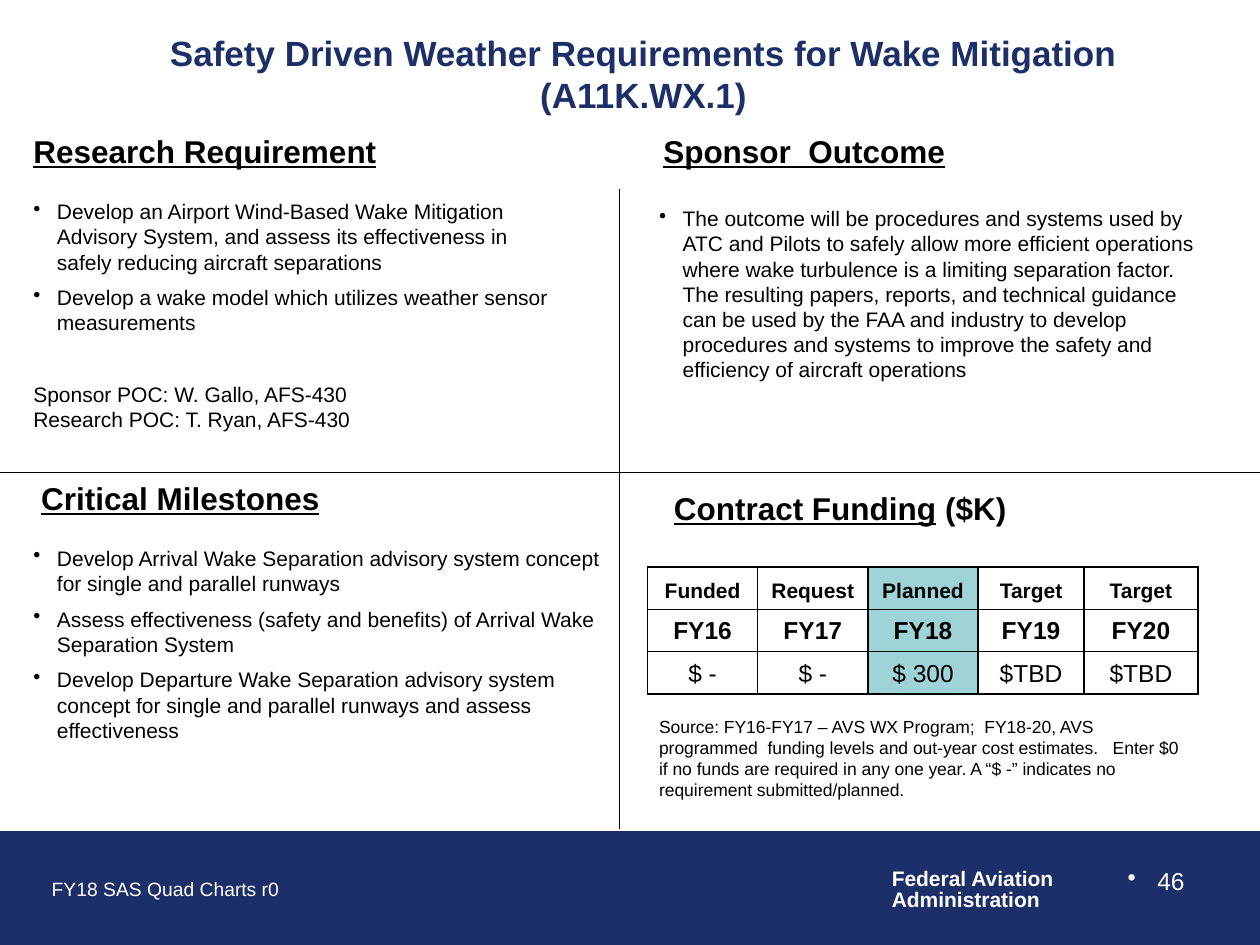
from dataclasses import dataclass

from lxml import etree
from pptx import Presentation
from pptx.dml.color import RGBColor
from pptx.enum.shapes import MSO_CONNECTOR, MSO_SHAPE
from pptx.enum.text import MSO_ANCHOR, PP_ALIGN
from pptx.oxml.ns import qn
from pptx.util import Pt

RECTANGLE = MSO_SHAPE.RECTANGLE
STRAIGHT = MSO_CONNECTOR.STRAIGHT
LEFT, CENTER, RIGHT = PP_ALIGN.LEFT, PP_ALIGN.CENTER, PP_ALIGN.RIGHT
TOP, MIDDLE, BOTTOM = MSO_ANCHOR.TOP, MSO_ANCHOR.MIDDLE, MSO_ANCHOR.BOTTOM


@dataclass(frozen=True)
class Theme:
    """Colours, font, type sizes and indents of the deck."""
    navy: RGBColor = RGBColor(0x1D, 0x2F, 0x68)
    teal: RGBColor = RGBColor(0x9E, 0xD3, 0xD7)
    black: RGBColor = RGBColor(0, 0, 0)
    white: RGBColor = RGBColor(255, 255, 255)
    font: str = "Arial"
    title: int = 20
    heading: int = 18
    figure: int = 14
    body: int = 12
    footer: int = 11
    note: int = 10
    bullet_indent: float = 13.5
    number_indent: float = 17
    gap: int = 6


THEME = Theme()

REQUIREMENTS = [
    "Develop an Airport Wind-Based Wake Mitigation Advisory System, and assess its "
    "effectiveness in safely reducing aircraft separations",
    "Develop a wake model which utilizes weather sensor measurements",
]
CONTACTS = ["Sponsor POC: W. Gallo, AFS-430", "Research POC: T. Ryan, AFS-430"]
OUTCOMES = [
    "The outcome will be procedures and systems used by ATC and Pilots to safely allow "
    "more efficient operations where wake turbulence is a limiting separation factor. "
    "The resulting papers, reports, and technical guidance can be used by the FAA and "
    "industry to develop procedures and systems to improve the safety and efficiency "
    "of aircraft operations",
]
MILESTONES = [
    "Develop Arrival Wake Separation advisory system concept for single and parallel runways",
    "Assess effectiveness (safety and benefits) of Arrival Wake Separation System",
    "Develop Departure Wake Separation advisory system concept for single and parallel "
    "runways and assess effectiveness",
]
FUNDING = [
    ["Funded", "Request", "Planned", "Target", "Target"],
    ["FY16", "FY17", "FY18", "FY19", "FY20"],
    ["$ -", "$ -", "$ 300", "$TBD", "$TBD"],
]
FUNDING_NOTE = (
    "Source: FY16-FY17 – AVS WX Program;  FY18-20, AVS programmed  funding levels and "
    "out-year cost estimates.   Enter $0 if no funds are required in any one year. "
    "A “$ -” indicates no requirement submitted/planned."
)
PLANNED_COLUMN = 2


def style(para, size, color=THEME.black, bold=False, align=LEFT):
    """Set the font and alignment of one paragraph."""
    para.alignment = align
    para.font.name = THEME.font
    para.font.size = Pt(size)
    para.font.bold = bold
    para.font.color.rgb = color


def add_bullet(para, indent):
    """Give a paragraph a round bullet on a hanging indent."""
    properties = para._p.get_or_add_pPr()
    properties.set("marL", str(Pt(indent)))
    properties.set("indent", str(-Pt(indent)))
    etree.SubElement(properties, qn("a:buChar")).set("char", "•")


def add_text(page, box, lines, size, indent=0, anchor=TOP, gap=0, **look):
    """Add a wrapped text box with one paragraph per line and return its frame."""
    frame = page.shapes.add_textbox(*map(Pt, box)).text_frame
    frame.word_wrap = True
    frame.vertical_anchor = anchor
    for index, line in enumerate(lines):
        para = frame.add_paragraph() if index else frame.paragraphs[0]
        para.text = line
        if indent:
            add_bullet(para, indent)
        if index and gap:
            para.space_before = Pt(gap)
        style(para, size, **look)
    return frame


def add_heading(page, box, text, suffix=""):
    """Add an underlined quadrant heading with an optional plain suffix."""
    para = add_text(page, box, [text], THEME.heading, bold=True).paragraphs[0]
    para.runs[0].font.underline = True
    if suffix:
        para.add_run().text = suffix


def add_quadrant(page, box, heading, bullets, inset, body_top):
    """Add a quadrant of a heading above bullets and return the bullet frame."""
    left, top, width, height = box
    add_heading(page, (left + inset, top, width - inset, 27), heading)
    body = (left, top + body_top, width, height - body_top)
    return add_text(page, body, bullets, THEME.body, THEME.bullet_indent, gap=THEME.gap)


def add_contacts(frame, contacts):
    """Append unbulleted contact lines, set apart from the bullets above."""
    for index, contact in enumerate(contacts):
        para = frame.add_paragraph()
        para.text = contact
        para.space_before = Pt(0 if index else 26.5)
        style(para, THEME.body)


def add_rule(page, start, end):
    """Draw a thin dividing line between quadrants."""
    rule = page.shapes.add_connector(STRAIGHT, *map(Pt, start + end))
    rule.line.color.rgb = THEME.black
    rule.line.width = Pt(0.75)
    etree.SubElement(rule._element.spPr, qn("a:effectLst"))


def add_borders(cell):
    """Put a one-point black line on each side of a table cell."""
    properties = cell._tc.get_or_add_tcPr()
    for index, side in enumerate(("lnL", "lnR", "lnT", "lnB")):
        border = etree.Element(qn(f"a:{side}"), w=str(Pt(1)))
        fill = etree.SubElement(border, qn("a:solidFill"))
        etree.SubElement(fill, qn("a:srgbClr")).set("val", str(THEME.black))
        properties.insert(index, border)


def add_funding_table(page, box):
    """Add the funding grid with its planned year highlighted."""
    table = page.shapes.add_table(len(FUNDING), len(FUNDING[0]), *map(Pt, box)).table
    for column, width in zip(table.columns, (63, 63, 63, 60.5, 65)):
        column.width = Pt(width)
    for row_index, values in enumerate(FUNDING):
        table.rows[row_index].height = Pt(box[3] / len(FUNDING))
        size = THEME.figure if row_index else THEME.body
        for column_index, value in enumerate(values):
            cell = table.cell(row_index, column_index)
            cell.text = value
            cell.vertical_anchor = BOTTOM
            cell.fill.solid()
            planned = column_index == PLANNED_COLUMN
            cell.fill.fore_color.rgb = THEME.teal if planned else THEME.white
            style(cell.text_frame.paragraphs[0], size, bold=row_index < 2, align=CENTER)
            add_borders(cell)


def add_funding(page, box):
    """Add the funding quadrant: heading, table and source note."""
    left, top, width, height = box
    add_heading(page, (left + 8.5, top, width - 8.5, 39), "Contract Funding", " ($K)")
    add_funding_table(page, (left + 0.5, top + 48, width, 72.5))
    note = (left, top + 129.5, width, height - 129.5)
    add_text(page, note, [FUNDING_NOTE], THEME.note)


def add_footer(page, box):
    """Add the navy band with document name, agency and page number."""
    left, top, width, height = box
    band = page.shapes.add_shape(RECTANGLE, *map(Pt, box))
    band.shadow.inherit = False
    band.fill.solid()
    band.fill.fore_color.rgb = THEME.navy
    band.line.color.rgb = THEME.navy
    band.line.width = Pt(0.75)
    agency = add_text(page, (left + 502.5, top + 18, 120, 32),
                      ["Federal Aviation", "Administration"], THEME.body,
                      color=THEME.white, bold=True)
    for para in agency.paragraphs:
        para.line_spacing = 0.85
    add_text(page, (left + 22.5, top + 23, 160, 21), ["FY18 SAS Quad Charts r0"],
             THEME.footer, color=THEME.white)
    add_text(page, (left + width - 204, top + 16.5, 168, 37), ["46"], THEME.figure,
             THEME.number_indent, color=THEME.white, align=RIGHT)


def build_quad_chart(page):
    """Place the title, four quadrants, dividers and footer on the page."""
    add_footer(page, (0, 475, 720, 64.5))
    add_text(page, (34, 18, 667.5, 48),
             ["Safety Driven Weather Requirements for Wake Mitigation (A11K.WX.1)"],
             THEME.title, anchor=MIDDLE, color=THEME.navy, bold=True, align=CENTER)
    research = add_quadrant(page, (12, 72, 318, 190), "Research Requirement",
                            REQUIREMENTS, 0, 38)
    add_contacts(research, CONTACTS)
    add_quadrant(page, (369.5, 72, 326, 150), "Sponsor  Outcome", OUTCOMES, 2.5, 42)
    add_quadrant(page, (12, 270, 342, 162), "Critical Milestones", MILESTONES, 4.5, 38)
    add_funding(page, (369.5, 276, 314.5, 198))
    add_rule(page, (354, 108), (354, 474))
    add_rule(page, (0, 270), (720, 270))


def main():
    """Build and save the one-page deck."""
    deck = Presentation()
    deck.slide_width, deck.slide_height = Pt(720), Pt(540)
    build_quad_chart(deck.slides.add_slide(deck.slide_layouts[6]))
    deck.save("out.pptx")


if __name__ == "__main__":
    main()
